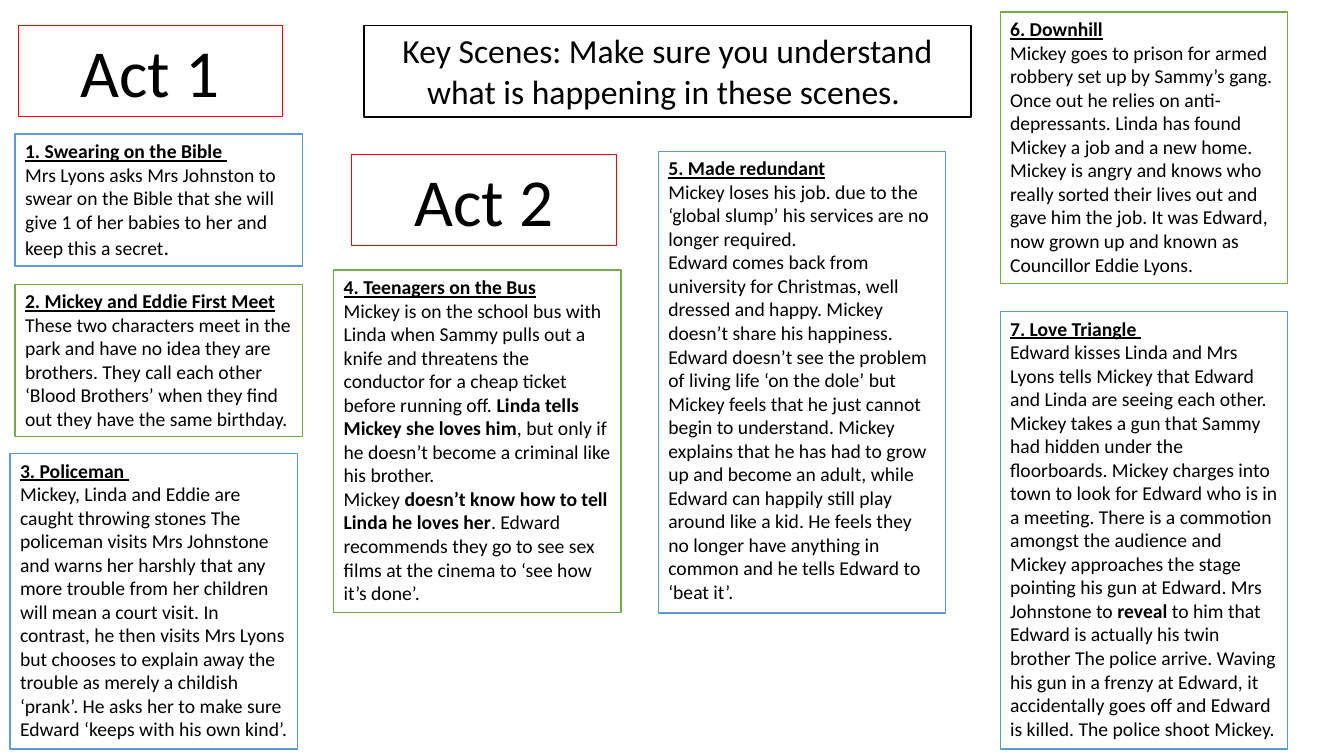
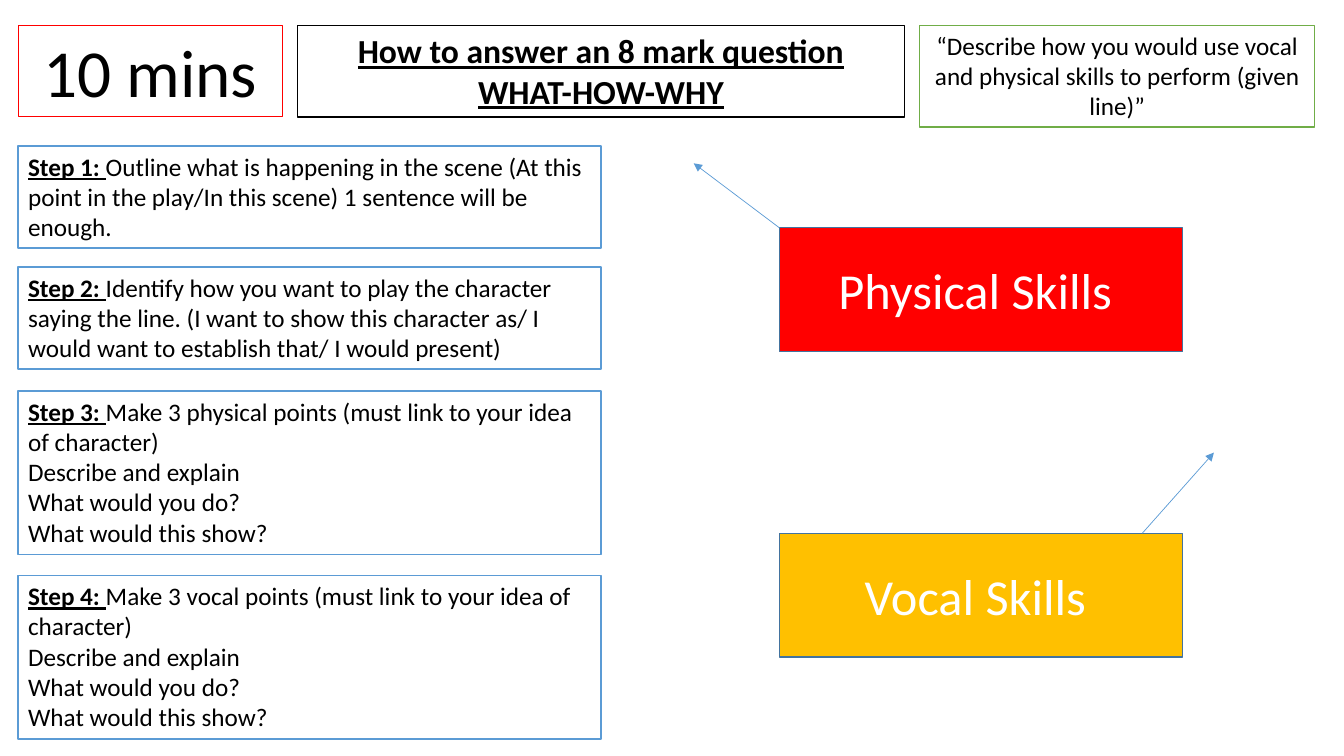
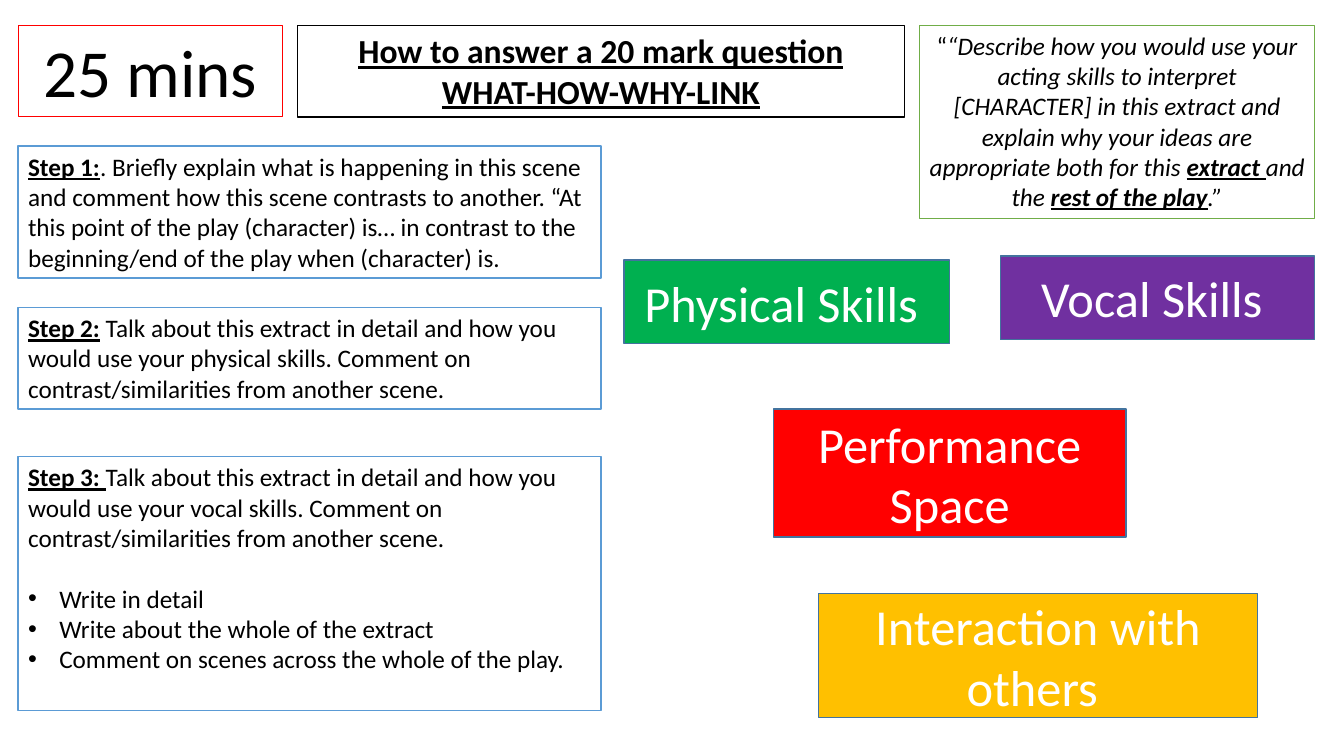
from lxml import etree
from pptx import Presentation
from pptx.dml.color import RGBColor
from pptx.enum.shapes import MSO_CONNECTOR, MSO_SHAPE
from pptx.enum.text import MSO_ANCHOR, PP_ALIGN
from pptx.oxml.ns import qn
from pptx.util import Emu, Pt

PX = 9144  # one px is a hundredth of an inch
FONT = "Calibri"
RECT, LINE = MSO_SHAPE.RECTANGLE, MSO_CONNECTOR.STRAIGHT
LEFT, MID = PP_ALIGN.LEFT, PP_ALIGN.CENTER
TOP, CENTRE = MSO_ANCHOR.TOP, MSO_ANCHOR.MIDDLE
BLUE, GREEN, RED, BLACK, WHITE = "5B9BD5", "70AD47", "FF0000", "000000", "FFFFFF"
GOLD, LEAF, PLUM, EDGE = "FFC000", "00B050", "7030A0", "43739E"
STYLES = {"b": "bold", "u": "underline", "i": "italic"}

# Box kinds shared by the slides
BASE = dict(fill=WHITE, line=BLUE, width=1, size=18, ink=BLACK, align=LEFT, anchor=TOP)
KINDS = {
    "title": BASE | dict(line=BLACK, size=24, align=MID),
    "badge": BASE | dict(fill=None, line=RED, width=0.75, size=48, align=MID),
    "quote": BASE | dict(line=GREEN, align=MID),
    "step": BASE,
    "blue": BASE | dict(size=14),
    "green": BASE | dict(line=GREEN, size=14),
}
for name, fill in dict(red=RED, gold=GOLD, leaf=LEAF, plum=PLUM).items():
    KINDS[name] = BASE | dict(fill=fill, line=EDGE, size=36, ink=WHITE,
                              align=MID, anchor=CENTRE)

# Key scenes: kind, left, top, height, heading, paragraphs
# A paragraph is a string or a list of (text, styles[, size]) runs
SCENE_W = 285
SCENES = [
    ("blue", 15, 133, 131, "1. Swearing on the Bible ", [
        [("Mrs Lyons asks Mrs Johnston to swear on the Bible that she will give 1 of her "
          "babies to her and keep this a secret", ""), (".", "", 16)]]),
    ("green", 15, 282, 151, "2. Mickey and Eddie First Meet", [
        "These two characters meet in the park and have no idea they are brothers. They "
        "call each other ‘Blood Brothers’ when they find out they have the same birthday."]),
    ("blue", 10, 450, 293, "3. Policeman ", [
        "Mickey, Linda and Eddie are caught throwing stones The policeman visits Mrs "
        "Johnstone and warns her harshly that any more trouble from her children will mean "
        "a court visit. In contrast, he then visits Mrs Lyons but chooses to explain away "
        "the trouble as merely a childish ‘prank’. He asks her to make sure Edward ‘keeps "
        "with his own kind’."]),
    ("green", 331, 268, 340, "4. Teenagers on the Bus", [
        [("Mickey is on the school bus with Linda when Sammy pulls out a knife and threatens "
          "the conductor for a cheap ticket before running off. ", ""),
         ("Linda tells Mickey she loves him", "b"),
         (", but only if he doesn’t become a criminal like his brother.", "")],
        [("Mickey ", ""), ("doesn’t know how to tell Linda he loves her", "b"),
         (". Edward recommends they go to see sex films at the cinema to ‘see how it’s "
          "done’.", "")]]),
    ("blue", 653, 150, 458, "5. Made redundant", [
        "Mickey loses his job. due to the ‘global slump’ his services are no longer required.",
        "Edward comes back from university for Christmas, well dressed and happy. Mickey "
        "doesn’t share his happiness. Edward doesn’t see the problem of living life ‘on the "
        "dole’ but Mickey feels that he just cannot begin to understand. Mickey explains "
        "that he has had to grow up and become an adult, while Edward can happily still "
        "play around like a kid. He feels they no longer have anything in common and he "
        "tells Edward to ‘beat it’."]),
    ("green", 992, 12, 269, "6. Downhill", [
        "Mickey goes to prison for armed robbery set up by Sammy’s gang. Once out he relies "
        "on anti-depressants. Linda has found Mickey a job and a new home. Mickey is angry "
        "and knows who really sorted their lives out and gave him the job. It was Edward, "
        "now grown up and known as Councillor Eddie Lyons."]),
    ("blue", 992, 309, 434, "7. Love Triangle ", [
        [("Edward kisses Linda and Mrs Lyons tells Mickey that Edward and Linda are seeing "
          "each other. Mickey takes a gun that Sammy had hidden under the floorboards. "
          "Mickey charges into town to look for Edward who is in a meeting. There is a "
          "commotion amongst the audience and Mickey approaches the stage pointing his gun "
          "at Edward. Mrs Johnstone to ", ""), ("reveal", "b"),
         (" to him that Edward is actually his twin brother The police arrive. Waving his "
          "gun in a frenzy at Edward, it accidentally goes off and Edward is killed. The "
          "police shoot Mickey.", "")]]),
]
ACTS = [
    ("badge", (18, 25, 262, 91), ["Act 1"]),
    ("badge", (349, 153, 262, 91), ["Act 2"]),
    ("title", (361, 25, 602, 91),
     ["Key Scenes: Make sure you understand what is happening in these scenes. "]),
]

# Question guides: steps are top, height, label, text, further lines
ASKS = ["Describe and explain", "What would you do?", "What would this show?"]
GUIDES = [
    dict(
        time="10 mins",
        title=["How to answer an 8 mark question", "WHAT-HOW-WHY"],
        quote=(101, ["“Describe how you would use vocal and physical skills to perform "
                     "(given line)”"]),
        steps=[
            (145, 101, "Step 1: ", "Outline what is happening in the scene (At this point in "
             "the play/In this scene) 1 sentence will be enough.", []),
            (265, 101, "Step 2: ", "Identify how you want to play the character saying the "
             "line. (I want to show this character as/ I would want to establish that/ "
             "I would present)", []),
            (388, 162, "Step 3: ",
             "Make 3 physical points (must link to your idea of character)", ASKS),
            (571, 162, "Step 4: ",
             "Make 3 vocal points (must link to your idea of character)", ASKS)],
        points=[],
        skills=[("red", (773, 226, 400, 123), ["Physical Skills "]),
                ("gold", (773, 529, 400, 123), ["Vocal Skills "])],
        arrows=[(773, 226, 688, 162), (1133, 529, 1204, 449)]),
    dict(
        time="25 mins",
        title=["How to answer a 20 mark question", "WHAT-HOW-WHY-LINK"],
        quote=(192, [[
            ("“", ""),
            ("“Describe how you would use your acting skills to interpret [CHARACTER] in "
             "this extract and explain why your ideas are appropriate both for this ", "i"),
            ("extract ", "biu"), ("and the ", "i"), ("rest of the play", "biu"),
            (".”", "i")]]),
        steps=[
            (145, 131, "Step 1:", ". Briefly explain what is happening in this scene and "
             "comment how this scene contrasts to another. “At this point of the play "
             "(character) is… in contrast to the beginning/end of the play when "
             "(character) is.", []),
            (305, 101, "Step 2:", " Talk about this extract in detail and how you would use "
             "your physical skills. Comment on contrast/similarities from another scene.", []),
            (453, 252, "Step 3: ", "Talk about this extract in detail and how you would use "
             "your vocal skills. Comment on contrast/similarities from another scene.", [])],
        points=["Write in detail", "Write about the whole of the extract",
                "Comment on scenes across the whole of the play."],
        skills=[("red", (767, 406, 350, 127), ["Performance Space"]),
                ("gold", (812, 589, 435, 123), ["Interaction with others "]),
                ("leaf", (619, 258, 323, 83), ["Physical Skills "]),
                ("plum", (992, 254, 312, 83), ["Vocal Skills "])],
        arrows=[]),
]


def rgb(code):
    return RGBColor.from_string(code)


def add_para(frame, para, kind, first=False):
    p = frame.paragraphs[0] if first else frame.add_paragraph()
    p.alignment = kind["align"]
    for text, marks, *size in [(para, "")] if isinstance(para, str) else para:
        run = p.add_run()
        run.text = text
        font = run.font
        font.color.rgb = rgb(kind["ink"])
        look = dict(name=FONT, size=Pt(size[0] if size else kind["size"]))
        look |= {STYLES[m]: True for m in marks}
        for key, value in look.items():
            setattr(font, key, value)
    return p


def add_box(slide, name, place, paras):
    kind = KINDS[name]
    box = slide.shapes.add_shape(RECT, *(Emu(n * PX) for n in place))
    box.shadow.inherit = False
    if kind["fill"]:
        box.fill.solid()
        box.fill.fore_color.rgb = rgb(kind["fill"])
    else:
        box.fill.background()
    box.line.color.rgb = rgb(kind["line"])
    box.line.width = Pt(kind["width"])
    frame = box.text_frame
    frame.word_wrap = True
    frame.vertical_anchor = kind["anchor"]
    for i, para in enumerate(paras):
        add_para(frame, para, kind, i == 0)
    return frame


def add_points(frame, points):
    for i, point in enumerate(points):
        p = add_para(frame, point, KINDS["step"])
        if i == 0:
            p.space_before = Pt(22)
        props = p._p.get_or_add_pPr()
        props.set("marL", str(31 * PX))
        props.set("indent", str(-31 * PX))
        etree.SubElement(props, qn("a:buFont"), typeface="Arial")
        etree.SubElement(props, qn("a:buChar"), char="•")


def add_arrow(slide, ends):
    arrow = slide.shapes.add_connector(LINE, *(Emu(n * PX) for n in ends))
    arrow.line.color.rgb = rgb(BLUE)
    arrow.line.width = Pt(0.5)
    etree.SubElement(arrow.line._get_or_add_ln(), qn("a:tailEnd"), type="triangle")
    etree.SubElement(arrow._element.spPr, qn("a:effectLst"))


def add_scenes(slide):
    for kind, x, y, h, head, paras in SCENES:
        add_box(slide, kind, (x, y, SCENE_W, h), [[(head, "bu")], *paras])
    for act in ACTS:
        add_box(slide, *act)


def add_guide(slide, guide):
    # Top band
    add_box(slide, "title", (295, 25, 602, 91), [[(t, "bu")] for t in guide["title"]])
    h, quote = guide["quote"]
    add_box(slide, "quote", (912, 25, 392, h), quote)
    add_box(slide, "badge", (18, 25, 262, 91), [guide["time"]])
    # Steps, with points under the last
    for y, h, label, text, more in guide["steps"]:
        frame = add_box(slide, "step", (18, y, 578, h),
                        [[(label, "bu"), (text, "")], *more])
    add_points(frame, guide["points"])
    # Skills
    for skill in guide["skills"]:
        add_box(slide, *skill)
    for ends in guide["arrows"]:
        add_arrow(slide, ends)


def main():
    deck = Presentation()
    deck.slide_width, deck.slide_height = Emu(1333 * PX), Emu(750 * PX)
    blank = deck.slide_layouts[6]
    add_scenes(deck.slides.add_slide(blank))
    for guide in GUIDES:
        add_guide(deck.slides.add_slide(blank), guide)
    deck.save("out.pptx")


if __name__ == "__main__":
    main()
